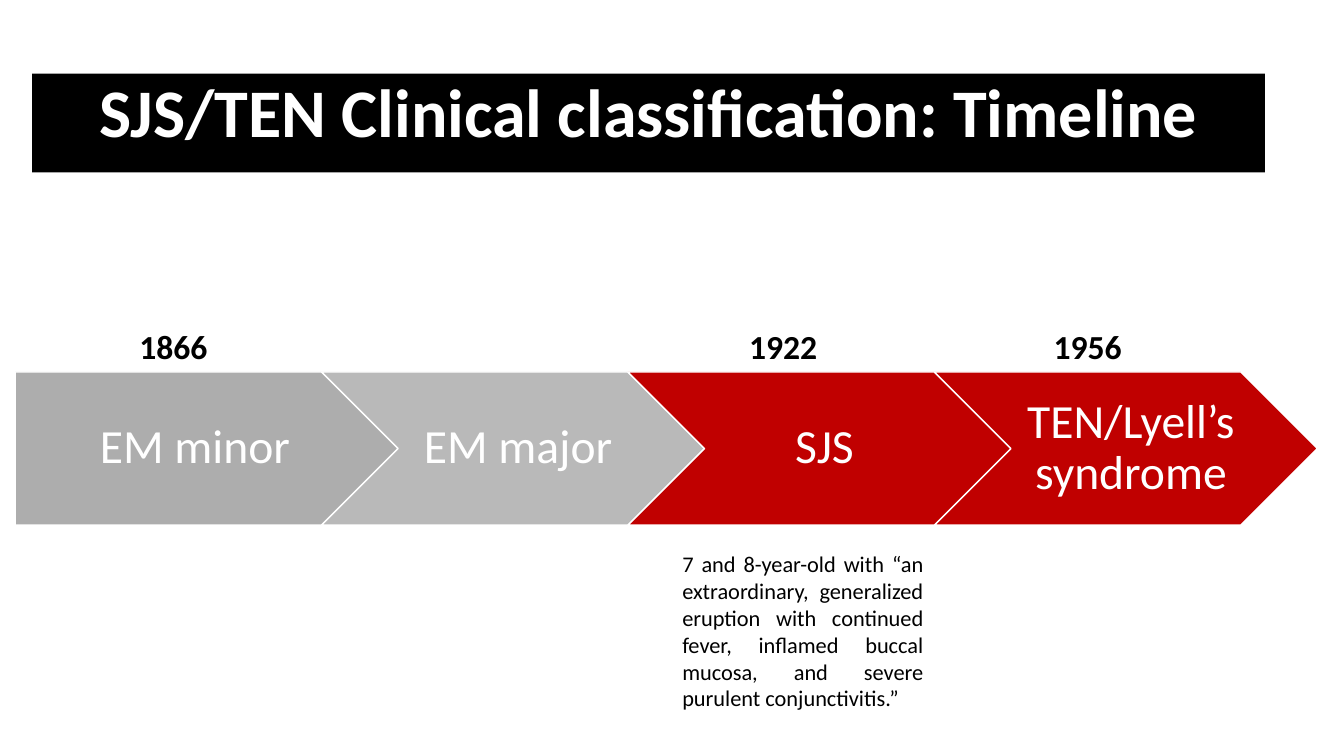
from lxml import etree
from pptx import Presentation
from pptx.dml.color import RGBColor
from pptx.enum.shapes import MSO_SHAPE
from pptx.enum.text import MSO_ANCHOR, PP_ALIGN
from pptx.oxml.ns import qn
from pptx.util import Pt

RECTANGLE, PENTAGON, CHEVRON = MSO_SHAPE.RECTANGLE, MSO_SHAPE.PENTAGON, MSO_SHAPE.CHEVRON
TOP, MIDDLE = MSO_ANCHOR.TOP, MSO_ANCHOR.MIDDLE
CENTER, JUSTIFY = PP_ALIGN.CENTER, PP_ALIGN.JUSTIFY

BLACK = RGBColor(0x00, 0x00, 0x00)
WHITE = RGBColor(0xFF, 0xFF, 0xFF)
GRAY = RGBColor(0xA5, 0xA5, 0xA5)
RED = RGBColor(0xC0, 0x00, 0x00)

TITLE_FONT = {"size": Pt(48.6), "bold": True}
STAGE_FONT = {"size": Pt(34), "bold": False}
YEAR_FONT = {"size": Pt(24), "bold": True}
NOTE_FONT = {"size": Pt(16), "bold": False}

# Label, outline, fill, opacity in percent, left inset
STAGES = [
    ("EM minor", PENTAGON, GRAY, 90, 14.4),
    ("EM major", CHEVRON, GRAY, 77, 10.8),
    ("SJS", CHEVRON, RED, 100, 10.8),
    ("TEN/Lyell’s syndrome", CHEVRON, RED, 100, 10.8),
]
YEARS = [("1866", 69.84), ("1922", 505.44), ("1956", 722.88)]
NOTE = ("7 and 8-year-old with “an extraordinary, generalized eruption with continued "
        "fever, inflamed buccal mucosa, and severe purulent conjunctivitis.”")


def write_text(shape, text, font_format, color, alignment=CENTER, anchor=TOP, spacing=1.0):
    frame = shape.text_frame
    frame.word_wrap = True
    frame.vertical_anchor = anchor
    paragraph = frame.paragraphs[0]
    paragraph.alignment = alignment
    paragraph.line_spacing = spacing
    run = paragraph.add_run()
    run.text = text
    run.font.name = "Calibri"
    run.font.color.rgb = color
    for attribute, value in font_format.items():
        setattr(run.font, attribute, value)
    return frame


def add_filled_shape(slide, outline, box, color, opacity=100):
    shape = slide.shapes.add_shape(outline, *map(Pt, box))
    shape.shadow.inherit = False
    shape.fill.solid()
    shape.fill.fore_color.rgb = color
    if opacity < 100:
        color_element = shape.fill._xPr.find(qn("a:solidFill"))[0]
        etree.SubElement(color_element, qn("a:alpha"), val=str(opacity * 1000))
    return shape


def add_title(slide, box):
    banner = add_filled_shape(slide, RECTANGLE, box, BLACK)
    banner.line.fill.background()
    write_text(banner, "SJS/TEN Clinical classification: Timeline", TITLE_FONT, WHITE, spacing=0.9)


def add_timeline(slide, box):
    left, top, width, height = box
    # Each stage overlaps the next by a fifth of its width
    stage_width = width / (1 + 0.8 * (len(STAGES) - 1))
    for index, (label, outline, color, opacity, inset) in enumerate(STAGES):
        stage_box = (left + index * 0.8 * stage_width, top, stage_width, height)
        stage = add_filled_shape(slide, outline, stage_box, color, opacity)
        stage.line.color.rgb = WHITE
        stage.line.width = Pt(1)
        frame = write_text(stage, label, STAGE_FONT, WHITE, anchor=MIDDLE, spacing=0.9)
        margins = {"margin_left": inset, "margin_right": 3.6,
                   "margin_top": 7.2, "margin_bottom": 7.2}
        for attribute, value in margins.items():
            setattr(frame, attribute, Pt(value))


def add_years(slide, top, width, height):
    for year, left in YEARS:
        text_box = slide.shapes.add_textbox(Pt(left), Pt(top), Pt(width), Pt(height))
        write_text(text_box, year, YEAR_FONT, BLACK)


def add_note(slide, box):
    text_box = slide.shapes.add_textbox(*map(Pt, box))
    write_text(text_box, NOTE, NOTE_FONT, BLACK, JUSTIFY)


def main():
    presentation = Presentation()
    presentation.slide_width = Pt(960)
    presentation.slide_height = Pt(540)
    slide = presentation.slides.add_slide(presentation.slide_layouts[6])
    # Heading
    add_title(slide, (23.04, 52.56, 880.56, 70.56))
    # Stages with their years
    add_timeline(slide, (10.8, 265.68, 930.24, 109.44))
    add_years(slide, 228.96, 108, 36)
    # First description of SJS
    add_note(slide, (480.24, 389.52, 186.48, 123.84))
    presentation.save("out.pptx")


if __name__ == "__main__":
    main()
